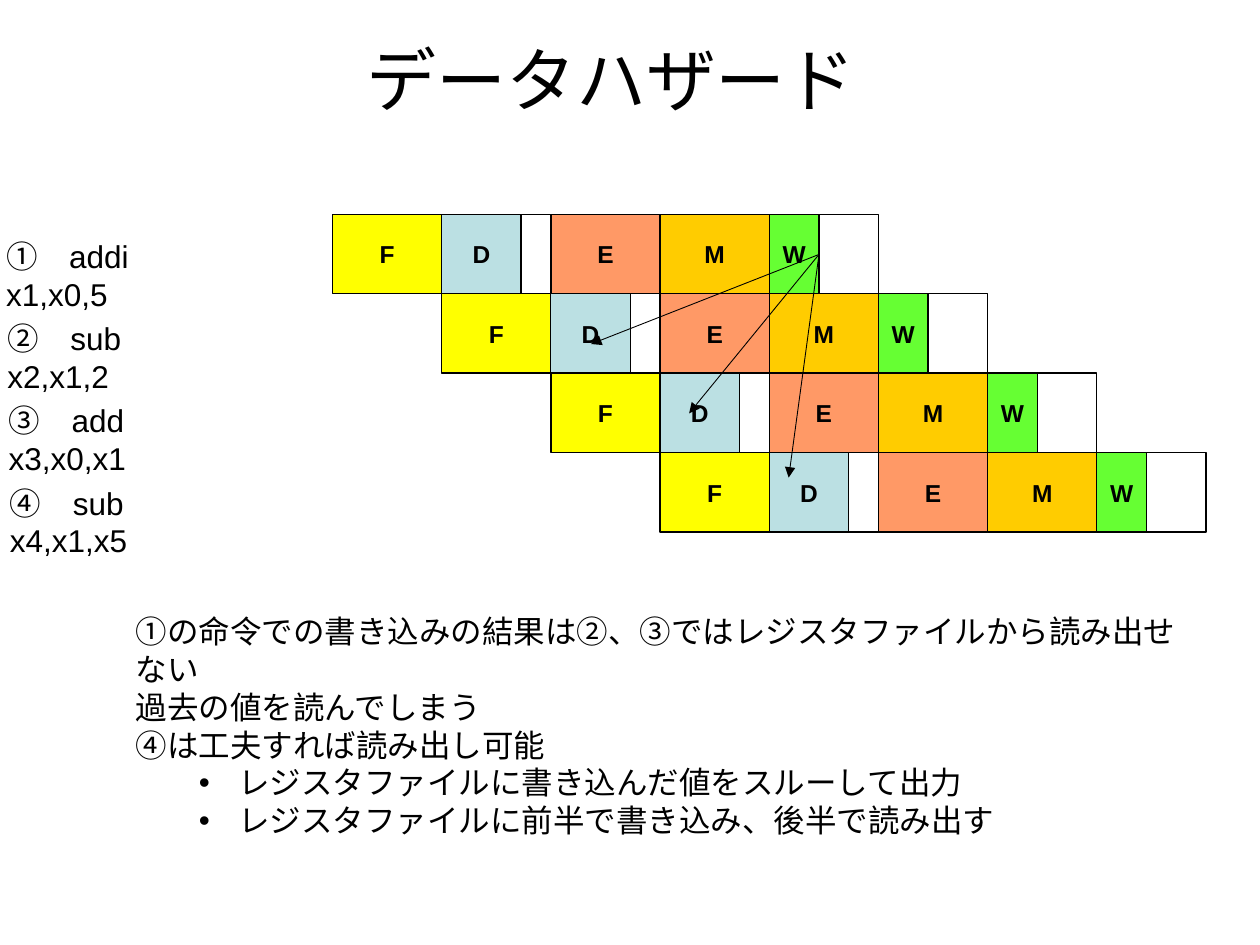
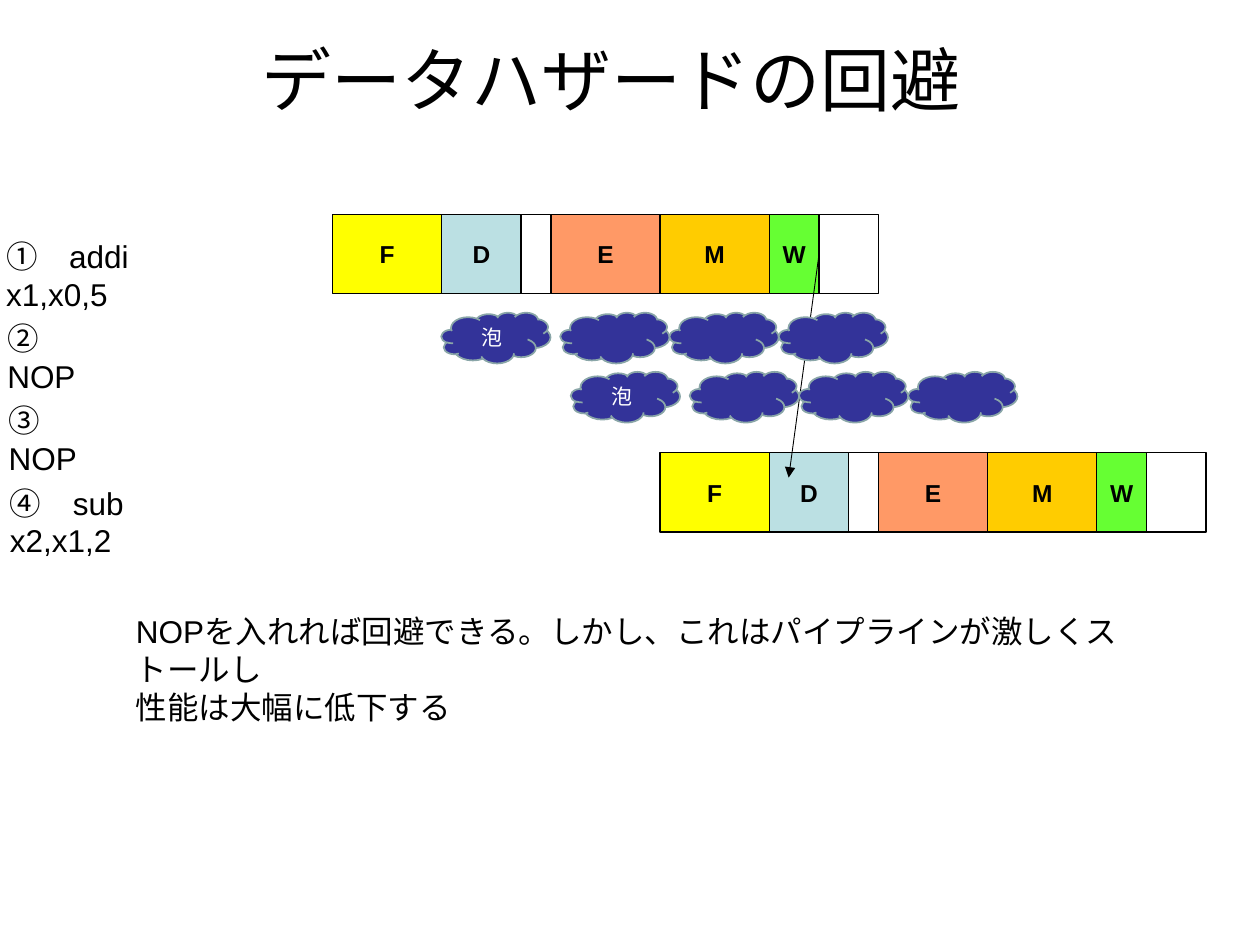
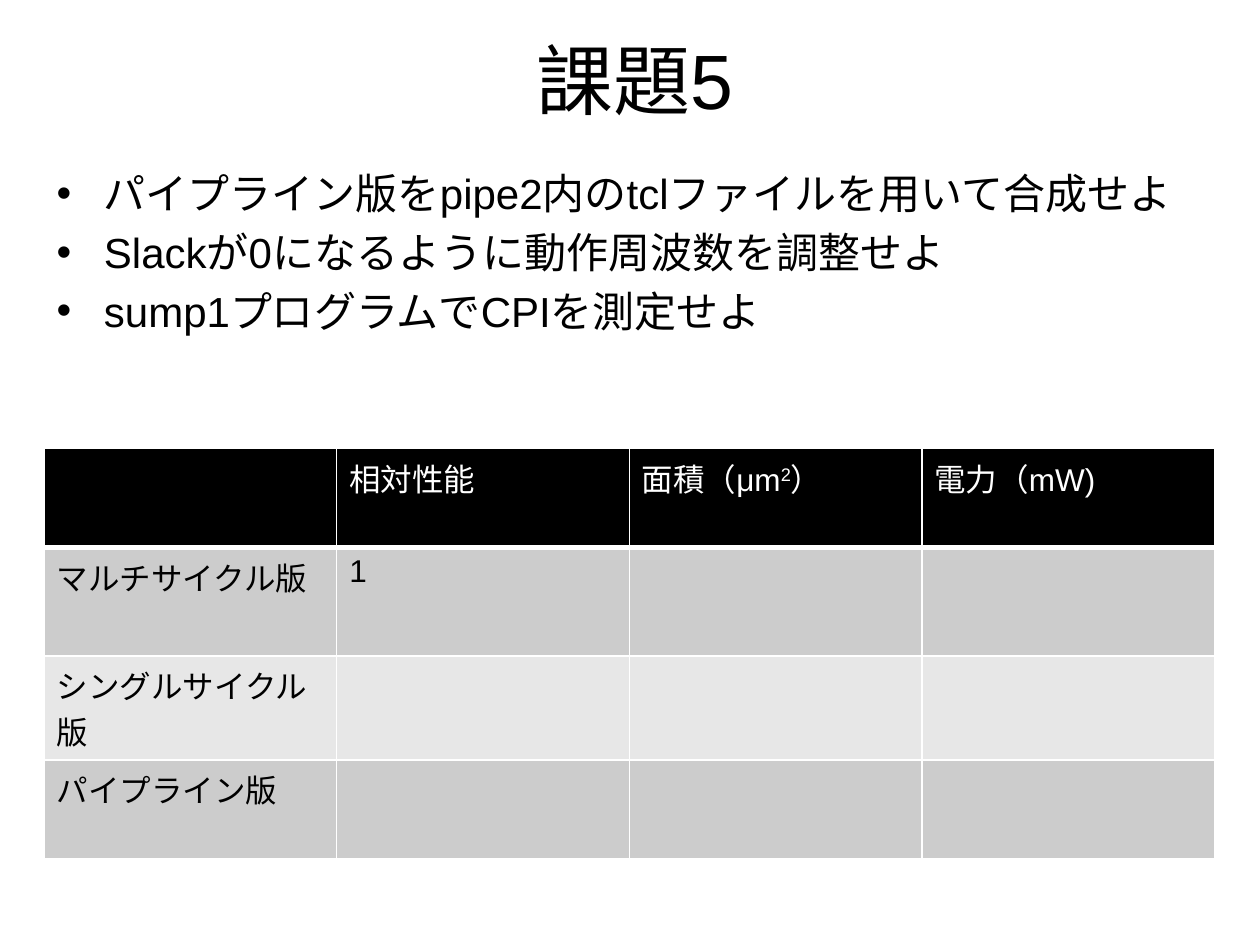
"""Builds three slides on pipeline data hazards, their avoidance and an exercise."""
from lxml import etree
from pptx import Presentation
from pptx.dml.color import RGBColor
from pptx.enum import shapes, text
from pptx.oxml import ns
from pptx.util import Pt

BLACK = RGBColor(0x00, 0x00, 0x00)
WHITE = RGBColor(0xFF, 0xFF, 0xFF)
YELLOW = RGBColor(0xFF, 0xFF, 0x00)
PALE_BLUE = RGBColor(0xBB, 0xE0, 0xE3)
ORANGE = RGBColor(0xFF, 0x99, 0x66)
AMBER = RGBColor(0xFF, 0xCC, 0x00)
GREEN = RGBColor(0x66, 0xFF, 0x33)
INDIGO = RGBColor(0x33, 0x33, 0x99)
GREY_BLUE = RGBColor(0x8A, 0xA6, 0xA8)
GREY = RGBColor(0xCC, 0xCC, 0xCC)
PALE_GREY = RGBColor(0xE7, 0xE7, 0xE7)

FONT = "Arial"
STAGE_LEFT, STAGE_TOP = 190, 122.4
STAGE_WIDTH, STAGE_HEIGHT = 62.4, 45.4
STAGES = [("F", YELLOW, 62.4), ("D", PALE_BLUE, 45.4), ("E", ORANGE, 62.4),
          ("M", AMBER, 62.4), ("W", GREEN, 28.4)]
CLOUD_HEIGHT, FIRST_CLOUD_STEP, CLOUD_COUNT = 29, 68, 4
WRITE_POINT = (468, 145.4)
READ_POINTS = {2: (337.8, 196.6), 3: (393.8, 236.2), 4: (450.7, 272.9)}

HAZARD_SLIDES = [
    {
        "title": "データハザード",
        "instructions": [("①　addi x1,x0,5", 144.7), ("②　sub x2,x1,2", 139.7),
                         ("③　add x3,x0,x1", 151.2), ("④　sub x4,x1,x5", 149.8)],
        "pipelines": [0, 1, 2, 3],
        "readers": [2, 3, 4],
        "bubbles": [],
        "notes_width": 610.6,
        "notes": [("①の命令での書き込みの結果は②、③ではレジスタファイルから読み出せない", False),
                  ("過去の値を読んでしまう", False),
                  ("④は工夫すれば読み出し可能", False),
                  ("レジスタファイルに書き込んだ値をスルーして出力", True),
                  ("レジスタファイルに前半で書き込み、後半で読み出す", True)],
    },
    {
        "title": "データハザードの回避",
        "instructions": [("①　addi x1,x0,5", 144.7), ("②　NOP", 84.2),
                         ("③　NOP", 84.2), ("④　sub x2,x1,2", 141.8)],
        "pipelines": [0, 3],
        "readers": [4],
        "bubbles": [(252.2, 178.6), (326.2, 212.4)],
        "notes_width": 580.3,
        "notes": [("NOPを入れれば回避できる。しかし、これはパイプラインが激しくストールし", False),
                  ("性能は大幅に低下する", False)],
    },
]

EXERCISE_TITLE = "課題5"
EXERCISES = ["パイプライン版をpipe2内のtclファイルを用いて合成せよ",
             "Slackが0になるように動作周波数を調整せよ",
             "sump1プログラムでCPIを測定せよ"]
RESULTS = [["", "相対性能", ("面積（μm", "2", "）"), "電力（mW)"],
           ["マルチサイクル版", "1", "", ""],
           ["シングルサイクル版", "", "", ""],
           ["パイプライン版", "", "", ""]]
ROW_HEIGHTS = [56.6, 62, 59.4, 56.6]
ROW_FILLS = [BLACK, GREY, PALE_GREY, GREY]


def points(*lengths):
    return [Pt(length) for length in lengths]


def style(paragraph, size, color=BLACK, bold=False, east_asian=True):
    font = paragraph.font
    font.name, font.size, font.bold = FONT, Pt(size), bold
    font.color.rgb = color
    if east_asian:
        etree.SubElement(font._element, ns.qn("a:ea")).set("typeface", FONT)


def place(box, *frame):
    box.left, box.top, box.width, box.height = points(*frame)


def set_title(page, words, left, size):
    title = page.shapes.title
    place(title, left, 0, 648, 90)
    title.text_frame.text = words
    title.text_frame.vertical_anchor = text.MSO_ANCHOR.MIDDLE
    paragraph = title.text_frame.paragraphs[0]
    paragraph.alignment = text.PP_ALIGN.CENTER
    style(paragraph, size)


def add_text(page, lines, *frame):
    box = page.shapes.add_textbox(*points(*frame))
    box.text_frame.word_wrap = True
    box.text_frame.text = "\n".join(words for words, _ in lines)
    for paragraph, (_, bulleted) in zip(box.text_frame.paragraphs, lines):
        style(paragraph, 18)
        if bulleted:
            paragraph.level = 1
            properties = paragraph._p.get_or_add_pPr()
            properties.set("marL", str(Pt(58.5)))
            properties.set("indent", str(Pt(-22.5)))
            bullet_font = etree.Element(ns.qn("a:buFont"), typeface=FONT)
            bullet = etree.Element(ns.qn("a:buChar"), char="•")
            properties.insert(0, bullet_font)
            properties.insert(1, bullet)


def add_box(page, kind, frame, fill, line, line_width, label="", size=14,
            color=BLACK, bold=True, wrap=False):
    box = page.shapes.add_shape(kind, *points(*frame))
    box.shadow.inherit = False
    if fill is None:
        box.fill.background()
    else:
        box.fill.solid()
        box.fill.fore_color.rgb = fill
    box.line.color.rgb, box.line.width = line, Pt(line_width)
    if label:
        box.text_frame.text = label
        box.text_frame.word_wrap = wrap
        box.text_frame.vertical_anchor = text.MSO_ANCHOR.MIDDLE
        paragraph = box.text_frame.paragraphs[0]
        paragraph.alignment = text.PP_ALIGN.CENTER
        style(paragraph, size, color, bold)


def add_pipeline(page, row):
    top = STAGE_TOP + row * STAGE_HEIGHT
    for column, (label, fill, width) in enumerate(STAGES, start=row):
        left = STAGE_LEFT + column * STAGE_WIDTH
        rectangle = shapes.MSO_SHAPE.RECTANGLE
        if width < STAGE_WIDTH:
            add_box(page, rectangle, (left, top, STAGE_WIDTH, STAGE_HEIGHT), None, BLACK, 0.75)
        add_box(page, rectangle, (left, top, width, STAGE_HEIGHT), fill, BLACK, 0.75, label)


def add_bubbles(page, left, top):
    for index in range(CLOUD_COUNT):
        shift = FIRST_CLOUD_STEP + (index - 1) * STAGE_WIDTH if index else 0
        add_box(page, shapes.MSO_SHAPE.CLOUD, (left + shift, top, STAGE_WIDTH, CLOUD_HEIGHT),
                INDIGO, GREY_BLUE, 1, "" if index else "泡", 12, WHITE, False, True)


def add_arrow(page, start, end):
    arrow = page.shapes.add_connector(shapes.MSO_CONNECTOR.STRAIGHT, *points(*start, *end))
    arrow.line.color.rgb, arrow.line.width = BLACK, Pt(0.5)
    etree.SubElement(arrow.line._get_or_add_ln(), ns.qn("a:tailEnd")).set("type", "triangle")
    etree.SubElement(arrow._element.spPr, ns.qn("a:effectLst"))


def add_hazard_slide(deck, content):
    page = deck.slides.add_slide(deck.slide_layouts[5])
    set_title(page, content["title"], 25.2, 40)
    for row, (words, width) in enumerate(content["instructions"]):
        add_text(page, [(words, False)], -3.6 + 0.72 * row, 131.8 + 47 * row, width, 29)
    for row in content["pipelines"]:
        add_pipeline(page, row)
    add_text(page, content["notes"], 70.6, 346.3, content["notes_width"],
             7.2 + 21.8 * len(content["notes"]))
    for reader in content["readers"]:
        add_arrow(page, WRITE_POINT, READ_POINTS[reader])
    for left, top in content["bubbles"]:
        add_bubbles(page, left, top)


def set_borders(cell, bottom_width):
    properties = cell._tc.get_or_add_tcPr()
    for side, width in (("L", 1), ("R", 1), ("T", 1), ("B", bottom_width)):
        border = etree.SubElement(properties, ns.qn(f"a:ln{side}"), w=str(Pt(width)))
        fill = etree.SubElement(border, ns.qn("a:solidFill"))
        etree.SubElement(fill, ns.qn("a:srgbClr"), val=str(WHITE))


def fill_cell(cell, content, fill, is_header):
    set_borders(cell, 3 if is_header else 1)
    cell.fill.solid()
    cell.fill.fore_color.rgb = fill
    paragraph = cell.text_frame.paragraphs[0]
    style(paragraph, 18, WHITE if is_header else BLACK, east_asian=False)
    spans = content if isinstance(content, tuple) else (content,)
    for index, words in enumerate(spans):
        if words:
            span = paragraph.add_run()
            span.text = words
            if index == 1:
                span.font._element.set("baseline", "30000")


def add_exercise_slide(deck):
    page = deck.slides.add_slide(deck.slide_layouts[1])
    set_title(page, EXERCISE_TITLE, 38.9, 44)
    body = page.placeholders[1]
    place(body, 25.2, 92.2, 677.5, 110.2)
    body.text_frame.text = "\n".join(EXERCISES)
    for paragraph in body.text_frame.paragraphs:
        style(paragraph, 24)
    frame = points(25.2, 256.3, 668.8, sum(ROW_HEIGHTS))
    table = page.shapes.add_table(len(RESULTS), len(RESULTS[0]), *frame).table
    for row, (height, fill, contents) in enumerate(zip(ROW_HEIGHTS, ROW_FILLS, RESULTS)):
        table.rows[row].height = Pt(height)
        for column, content in enumerate(contents):
            fill_cell(table.cell(row, column), content, fill, row == 0)


def main():
    deck = Presentation()
    deck.slide_width, deck.slide_height = points(720, 540)
    for content in HAZARD_SLIDES:
        add_hazard_slide(deck, content)
    add_exercise_slide(deck)
    deck.save("out.pptx")


if __name__ == "__main__":
    main()
